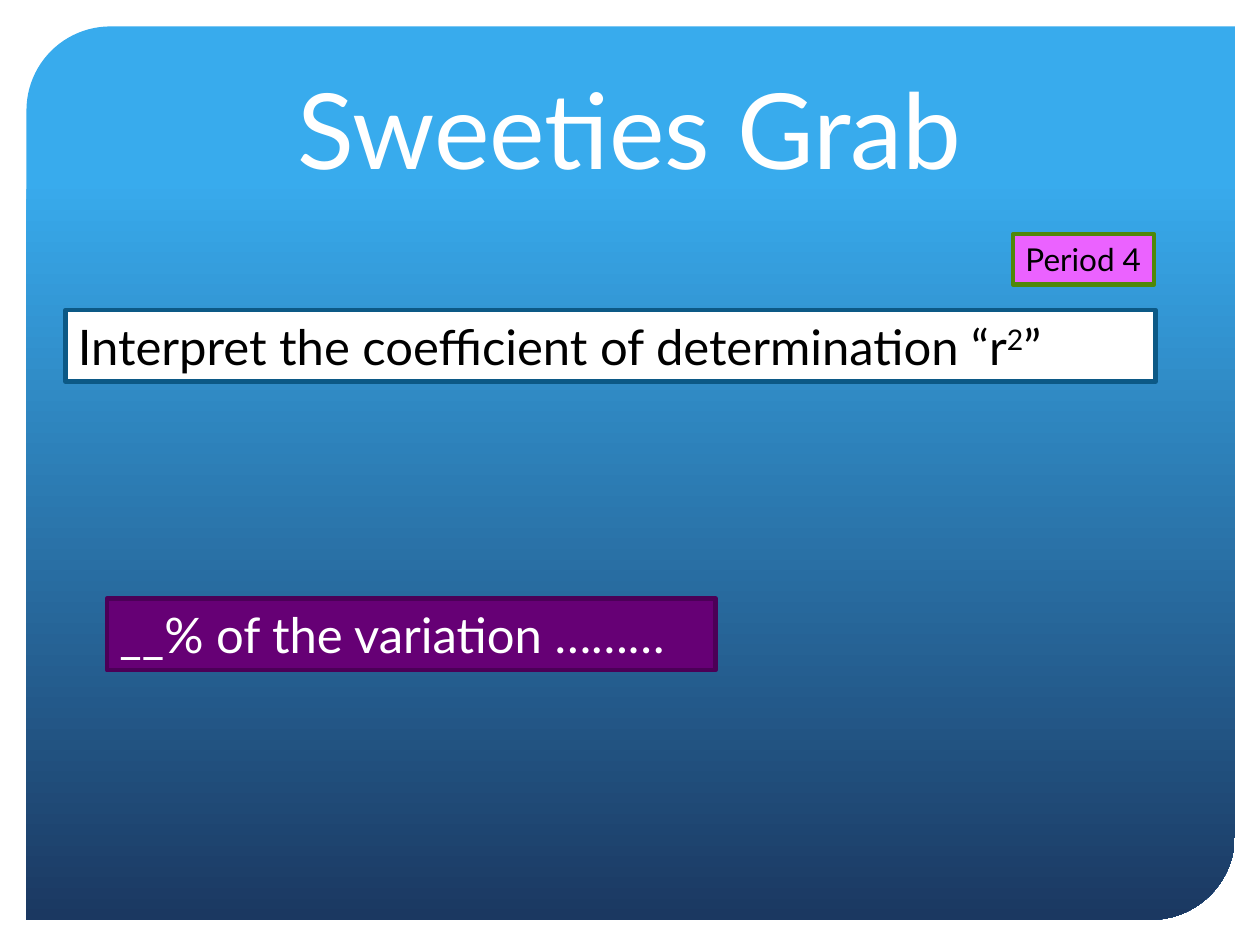
from pptx import Presentation
from pptx.dml.color import RGBColor
from pptx.enum.shapes import MSO_SHAPE as SHAPE
from pptx.enum.text import MSO_ANCHOR as ANCHOR, MSO_AUTO_SIZE as AUTO, PP_ALIGN as ALIGN
from pptx.util import Inches, Pt

FONT = "Lato"


def rgb(value):
    return RGBColor.from_string(value)


def add_text(sp, text, size=28, color="000000", align=ALIGN.LEFT,
             anchor=ANCHOR.TOP, wrap=True, grow=False):
    """Write text into a shape; parts between ^ marks are superscript."""
    tf = sp.text_frame
    tf.word_wrap = wrap
    tf.auto_size = AUTO.SHAPE_TO_FIT_TEXT if grow else AUTO.NONE
    tf.vertical_anchor = anchor
    p = tf.paragraphs[0]
    p.alignment = align
    for i, part in enumerate(text.split("^")):
        r = p.add_run()
        r.text = part
        r.font.name = FONT
        r.font.size = Pt(size)
        r.font.color.rgb = rgb(color)
        if i % 2:
            r.font._element.set("baseline", "30000")


def add_background(slide):
    sp = slide.shapes.add_shape(SHAPE.ROUND_2_DIAG_RECTANGLE, Inches(0.21),
                                Inches(0.21), Inches(9.59), Inches(7.09))
    sp.shadow.inherit = False
    sp.adjustments[0] = 0.094
    sp.adjustments[1] = 0
    sp.line.fill.background()
    sp.fill.gradient()
    sp.fill.gradient_angle = 270
    stops = [(0.17, "38ABED"), (1, "1B3861")]
    for stop, (position, color) in zip(sp.fill.gradient_stops, stops):
        stop.position = position
        stop.color.rgb = rgb(color)


def add_title(slide, text):
    sp = slide.shapes.add_textbox(Inches(0.85), Inches(0.42), Inches(8.29), Inches(1.14))
    add_text(sp, text, size=60, color="FFFFFF", align=ALIGN.CENTER, anchor=ANCHOR.BOTTOM)


def add_label(slide, text, left, top, width, height, fill, line, **text_format):
    sp = slide.shapes.add_shape(SHAPE.RECTANGLE, Inches(left), Inches(top),
                                Inches(width), Inches(height))
    sp.shadow.inherit = False
    sp.fill.solid()
    sp.fill.fore_color.rgb = rgb(fill)
    sp.line.color.rgb = rgb(line)
    sp.line.width = Pt(2.5)
    add_text(sp, text, grow=True, **text_format)


def main():
    prs = Presentation()
    prs.slide_width, prs.slide_height = Inches(10), Inches(7.5)
    slide = prs.slides.add_slide(prs.slide_layouts[6])
    add_background(slide)
    add_label(slide, "__% of the variation ………", 0.85, 4.75, 4.83, 0.57,
              "660075", "4B0057", color="FFFFFF", wrap=False)
    add_label(slide, "Interpret the coefficient of determination “r^2^”",
              0.52, 2.46, 8.65, 0.57, "FFFFFF", "0C5986")
    add_title(slide, "Sweeties Grab")
    add_label(slide, "Period 4", 8.04, 1.86, 1.12, 0.4,
              "EB62FF", "508709", size=18, wrap=False)
    prs.save("out.pptx")


if __name__ == "__main__":
    main()
